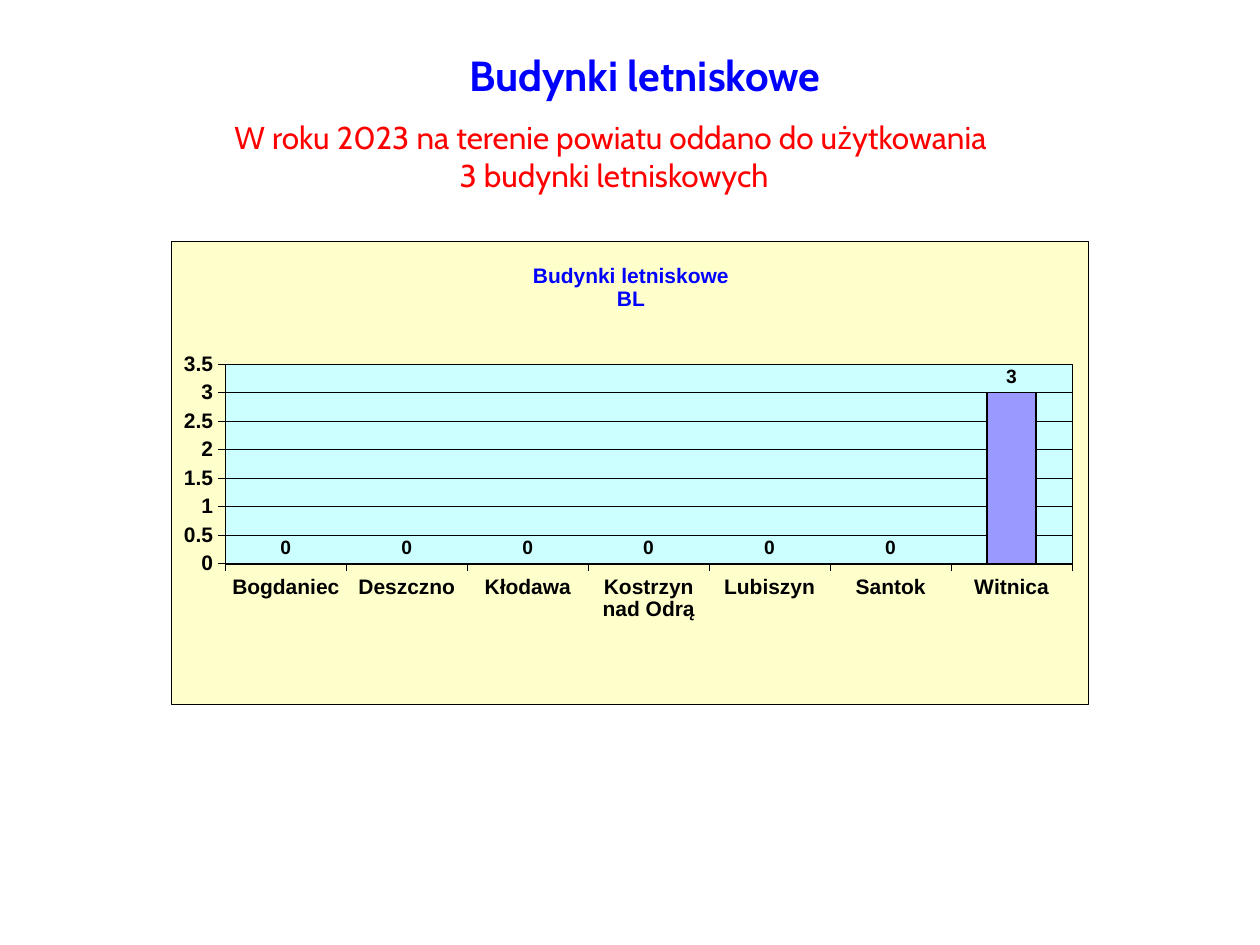
from lxml.etree import fromstring
from pptx import Presentation
from pptx.chart.data import CategoryChartData
from pptx.dml.color import RGBColor
from pptx.enum.chart import XL_CHART_TYPE, XL_LABEL_POSITION, XL_TICK_MARK
from pptx.enum.text import MSO_ANCHOR, MSO_AUTO_SIZE, PP_ALIGN
from pptx.oxml.ns import nsdecls, qn
from pptx.util import Cm, Pt

rgb = RGBColor.from_string


def style_font(font, name, size, color, bold=False):
    font.name, font.size, font.bold = name, Pt(size), bold
    font.color.rgb = rgb(color)


def area_format(fill):
    """Chart area properties: a solid fill with a hairline black border."""
    return fromstring(
        f'<c:spPr {nsdecls("c", "a")}>'
        f'<a:solidFill><a:srgbClr val="{fill}"/></a:solidFill>'
        f'<a:ln w="{Pt(0.25)}"><a:solidFill><a:srgbClr val="000000"/></a:solidFill></a:ln>'
        '</c:spPr>')


prs = Presentation()
prs.slide_width, prs.slide_height = Cm(25.4), Cm(19.05)
slide = prs.slides.add_slide(prs.slide_layouts[5])

# Summary sentence and heading
summary = slide.shapes.title
summary.left, summary.top, summary.width, summary.height = Cm(1.9), Cm(2.16), Cm(20.96), Cm(1.96)
heading = slide.shapes.add_textbox(Cm(3.5), Cm(0.86), Cm(19), Cm(1.28))
for box, text, anchor, size, color, bold in (
    (summary, "W roku 2023 na terenie powiatu oddano do użytkowania \v3 budynki letniskowych",
     MSO_ANCHOR.MIDDLE, 18, "FF0000", False),
    (heading, "Budynki letniskowe", MSO_ANCHOR.BOTTOM, 24, "0000FF", True),
):
    frame = box.text_frame
    frame.word_wrap = True
    frame.auto_size = MSO_AUTO_SIZE.NONE
    frame.vertical_anchor = anchor
    paragraph = frame.paragraphs[0]
    paragraph.text = text
    paragraph.alignment = PP_ALIGN.CENTER
    style_font(paragraph.font, "Cabin", size, color, bold)

# Holiday buildings by municipality
buildings = CategoryChartData(number_format="General")
buildings.categories = ["Bogdaniec", "Deszczno", "Kłodawa", "Kostrzyn nad Odrą",
                        "Lubiszyn", "Santok", "Witnica"]
buildings.add_series("Series 1", [0, 0, 0, 0, 0, 0, 3])
chart = slide.shapes.add_chart(XL_CHART_TYPE.COLUMN_CLUSTERED, Cm(3.45), Cm(4.85),
                               Cm(18.5), Cm(9.35), buildings).chart
chart.has_legend = False
style_font(chart.font, "Arial", 10, "000000")

chart.has_title = True
chart_title = chart.chart_title
chart_title.text_frame.text = "Budynki letniskowe\nBL"
for paragraph in chart_title.text_frame.paragraphs:
    style_font(paragraph.font, "Arial", 12, "0000FF", True)

counts = chart.value_axis
counts.minimum_scale, counts.maximum_scale, counts.major_unit = 0, 3.5, 0.5
counts.has_major_gridlines = True
for axis in (chart.category_axis, counts):
    axis.major_tick_mark = XL_TICK_MARK.OUTSIDE
    axis.minor_tick_mark = XL_TICK_MARK.NONE
    style_font(axis.tick_labels.font, "Arial", 12, "000000", True)
for line in (chart.category_axis.format.line, counts.format.line,
             counts.major_gridlines.format.line):
    line.color.rgb = rgb("000000")
    line.width = Pt(0.25)

plot = chart.plots[0]
plot.gap_width = 150
plot.vary_by_categories = False
columns = plot.series[0]
columns.invert_if_negative = False
municipality_colors = {1: "FF0000", 2: "00FFFF", 6: "9999FF"}
column_formats = [(columns.format, "FF8080")]
column_formats += [(columns.points[i].format, color) for i, color in municipality_colors.items()]
for column_format, color in column_formats:
    column_format.fill.solid()
    column_format.fill.fore_color.rgb = rgb(color)
    column_format.line.color.rgb = rgb("000000")
    column_format.line.width = Pt(1)
labels = columns.data_labels
labels.show_value = True
labels.position = XL_LABEL_POSITION.OUTSIDE_END
style_font(labels.font, "Arial", 11, "000000", True)

# Backgrounds and fixed positions inside the chart
chart_xml = chart.element.find(qn("c:chart"))
plot_area = chart_xml.find(qn("c:plotArea"))
chart_xml.addnext(area_format("FFFFCC"))
plot_area.append(area_format("CCFFFF"))
for parent, index, settings in (
    (plot_area, 0, {"layoutTarget": "inner", "xMode": "edge", "yMode": "edge",
                    "x": 0.059, "y": 0.266, "w": 0.923, "h": 0.431}),
    (chart_xml.find(qn("c:title")), 1, {"xMode": "edge", "yMode": "edge", "x": 0.39, "y": 0.04}),
):
    for automatic in parent.findall(qn("c:layout")):
        parent.remove(automatic)
    values = "".join(f'<c:{tag} val="{value}"/>' for tag, value in settings.items())
    parent.insert(index, fromstring(
        f'<c:layout {nsdecls("c")}><c:manualLayout>{values}</c:manualLayout></c:layout>'))

prs.save("out.pptx")
